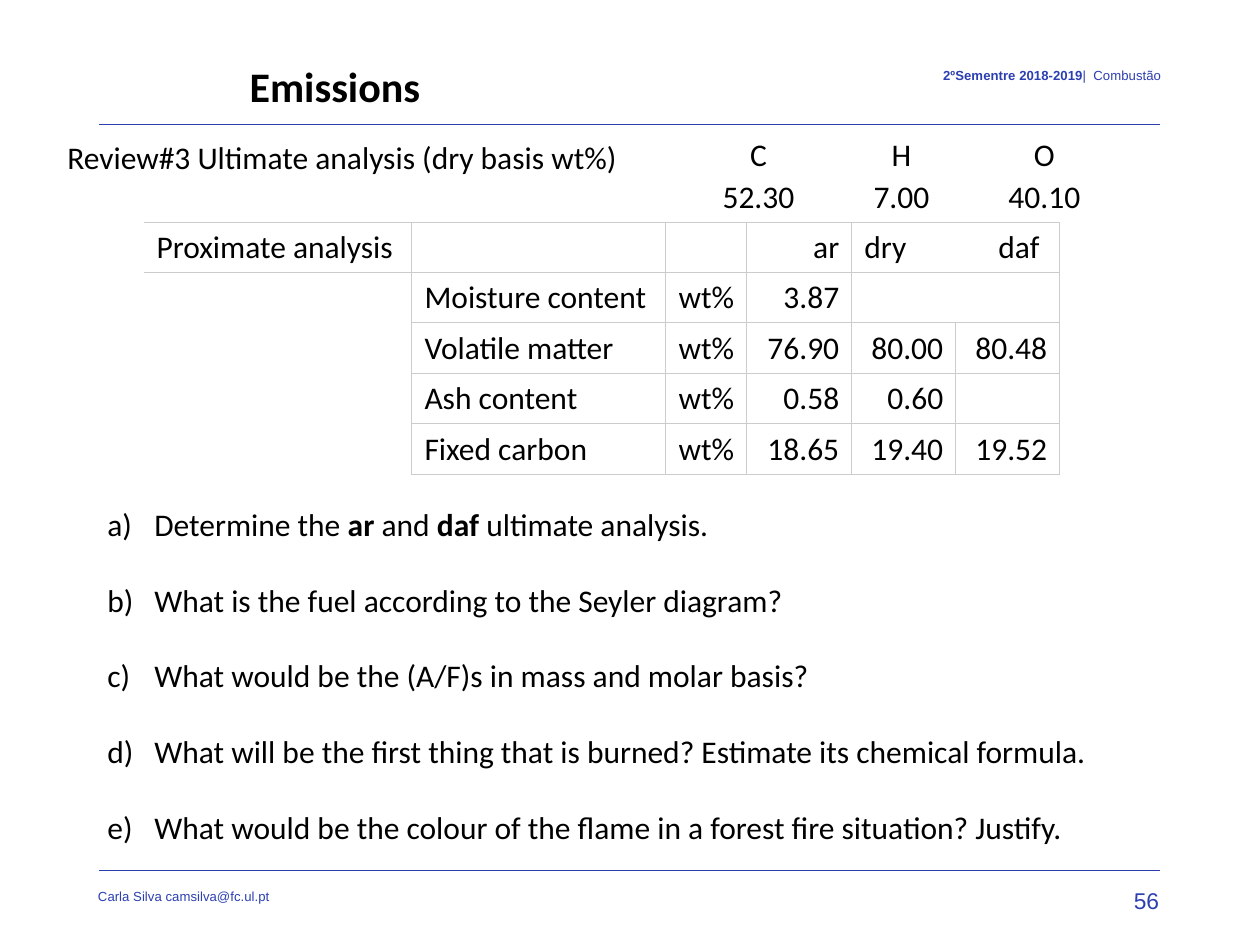
from dataclasses import dataclass

from lxml.etree import SubElement
from pptx import Presentation
from pptx.dml.color import RGBColor
from pptx.enum.shapes import MSO_CONNECTOR
from pptx.enum.text import MSO_ANCHOR, MSO_AUTO_SIZE, PP_ALIGN
from pptx.oxml.ns import qn
from pptx.util import Emu, Pt

PX = 914400 / 126
BLUE = RGBColor(0x2C, 0x3F, 0xB1)
BLACK = RGBColor(0, 0, 0)
WHITE = RGBColor(0xFF, 0xFF, 0xFF)
GRID = RGBColor(0xCC, 0xCC, 0xCC)
NO_STYLE = "{2D5ABB26-0587-4C30-8999-92F81FD0307C}"
LEFT, CENTER, RIGHT = PP_ALIGN.LEFT, PP_ALIGN.CENTER, PP_ALIGN.RIGHT


@dataclass(frozen=True)
class Span:
    text: str
    bold: bool = False


@dataclass(frozen=True)
class Box:
    left: int
    top: int
    width: int
    height: int


@dataclass(frozen=True)
class Furniture:
    box: Box
    spans: list[Span]
    align: PP_ALIGN = LEFT
    raised: bool = True


FURNITURE = [
    Furniture(Box(281, 58, 880, 32),
              [Span("2ºSementre 2018-2019", True), Span("|  Combustão")], RIGHT),
    Furniture(Box(98, 879, 880, 34), [Span("Carla Silva camsilva@fc.ul.pt")]),
    Furniture(Box(864, 881, 295, 50), [Span("56")], RIGHT, False),
]
RULES = [124, 870]
ULTIMATE = [["C", "H", "O"], ["52.30", "7.00", "40.10"]]
PROXIMATE = [
    ["Proximate analysis", "", "", "", "ar", "dry\tdaf", ""],
    ["", "", "Moisture content", "wt%", "3.87", "", ""],
    ["", "", "Volatile matter", "wt%", "76.90", "80.00", "80.48"],
    ["", "", "Ash content", "wt%", "0.58", "0.60", ""],
    ["", "", "Fixed carbon", "wt%", "18.65", "19.40", "19.52"],
]
PROXIMATE_WIDTHS = [80, 188, 254, 81, 105, 104, 104]
MERGED = [(0, 0), (0, 5), (1, 5)]
QUESTIONS = [
    [Span("Determine the "), Span("ar", True), Span(" and "), Span("daf", True),
     Span(" ultimate analysis.")],
    [Span("What is the fuel according to the Seyler diagram?")],
    [Span("What would be the (A/F)s in mass and molar basis?")],
    [Span("What will be the first thing that is burned? Estimate its chemical formula.")],
    [Span("What would be the colour of the flame in a forest fire situation? Justify.")],
]


def px(length: int) -> Emu:
    return Emu(round(length * PX))


def place(box: Box) -> list[Emu]:
    return [px(side) for side in (box.left, box.top, box.width, box.height)]


def style(paragraph, size=18, color=BLACK, name="Calibri", align=LEFT, bold=None) -> None:
    paragraph.alignment = align
    font = paragraph.font
    font.size, font.name, font.bold = Pt(size), name, bold
    font.color.rgb = color


def add_spans(paragraph, spans: list[Span]) -> None:
    for span in spans:
        run = paragraph.add_run()
        run.text = span.text
        if len(spans) > 1:
            run.font.bold = span.bold


def add_frame(slide, box: Box):
    frame = slide.shapes.add_textbox(*place(box)).text_frame
    frame.word_wrap = True
    return frame


def add_furniture(slide, item: Furniture) -> None:
    frame = add_frame(slide, item.box)
    frame.margin_left = frame.margin_right = 0
    paragraph = frame.paragraphs[0]
    style(paragraph, 13, BLUE, "Arial", item.align)
    add_spans(paragraph, item.spans)
    if item.raised:
        for run in paragraph.runs:
            run._r.get_or_add_rPr().set("baseline", "30000")


def add_rule(slide, top: int) -> None:
    rule = slide.shapes.add_connector(
        MSO_CONNECTOR.STRAIGHT, px(99), px(top), px(1160), px(top))
    rule.line.color.rgb = BLUE
    rule.line.width = Pt(0.5)
    SubElement(rule._element.spPr, qn("a:effectLst"))


def add_table(slide, left: int, top: int, widths: list[int], row_height: int, rows: int):
    box = Box(left, top, sum(widths), row_height * rows)
    table = slide.shapes.add_table(rows, len(widths), *place(box)).table
    table.first_row = table.horz_banding = False
    table._tbl.tblPr.find(qn("a:tableStyleId")).text = NO_STYLE
    for column, width in zip(table.columns, widths):
        column.width = px(width)
    for row in table.rows:
        row.height = px(row_height)
    return table


def fill_cell(cell, text: str, align: PP_ALIGN) -> None:
    cell.vertical_anchor = MSO_ANCHOR.MIDDLE
    paragraph = cell.text_frame.paragraphs[0]
    if "\t" in text:
        stops = SubElement(paragraph._p.get_or_add_pPr(), qn("a:tabLst"))
        SubElement(stops, qn("a:tab"), pos=str(px(134)), algn="l")
    style(paragraph, align=align)
    if text:
        paragraph.add_run().text = text


def set_borders(cell, sides: str) -> None:
    properties = cell._tc.get_or_add_tcPr()
    for side in "LRTB":
        line = SubElement(properties, qn(f"a:ln{side}"), w=str(Pt(0.6)))
        if side in sides:
            fill = SubElement(line, qn("a:solidFill"))
            SubElement(fill, qn("a:srgbClr"), val=str(GRID))
        else:
            SubElement(line, qn("a:noFill"))


def proximate_borders(row: int, column: int) -> str:
    if column > 1:
        return "LRTB"
    if row == 0:
        return "TB" + "R" * column
    return "T" * (row == 1) + "R" * column


def add_ultimate(slide) -> None:
    table = add_table(slide, 687, 135, [143] * 3, 42, len(ULTIMATE))
    for r, texts in enumerate(ULTIMATE):
        for c, text in enumerate(texts):
            cell = table.cell(r, c)
            cell.margin_left = cell.margin_right = px(2)
            cell.margin_top = cell.margin_bottom = px(2)
            fill_cell(cell, text, CENTER)


def add_proximate(slide) -> None:
    table = add_table(slide, 144, 222, PROXIMATE_WIDTHS, 50, len(PROXIMATE))
    for r, texts in enumerate(PROXIMATE):
        for c, text in enumerate(texts):
            cell = table.cell(r, c)
            set_borders(cell, proximate_borders(r, c))
            cell.fill.solid()
            cell.fill.fore_color.rgb = WHITE
            fill_cell(cell, text, RIGHT if c > 3 and "\t" not in text else LEFT)
    for r, c in MERGED:
        table.cell(r, c).merge(table.cell(r, c + 1))


def add_questions(slide) -> None:
    frame = add_frame(slide, Box(95, 499, 1017, 357))
    for number, spans in enumerate(QUESTIONS):
        paragraph = frame.add_paragraph() if number else frame.paragraphs[0]
        properties = paragraph._p.get_or_add_pPr()
        properties.set("marL", str(px(47)))
        properties.set("indent", str(px(-47)))
        SubElement(properties, qn("a:buAutoNum"), type="alphaLcParenR")
        if number:
            paragraph.space_before = Pt(21.6)
        style(paragraph)
        add_spans(paragraph, spans)


def add_title(slide) -> None:
    title = slide.shapes.title
    title.left, title.top, title.width, title.height = place(Box(237, 54, 523, 63))
    frame = title.text_frame
    frame.auto_size = MSO_AUTO_SIZE.NONE
    frame.vertical_anchor = MSO_ANCHOR.TOP
    frame.text = "Emissions"
    style(frame.paragraphs[0], 24, bold=True)


def main() -> None:
    deck = Presentation()
    deck.slide_width, deck.slide_height = px(1260), px(945)
    slide = deck.slides.add_slide(deck.slide_layouts[5])
    for top in RULES:
        add_rule(slide, top)
    for item in FURNITURE:
        add_furniture(slide, item)
    add_title(slide)
    review = add_frame(slide, Box(55, 132, 620, 51)).paragraphs[0]
    style(review)
    add_spans(review, [Span("Review#3 Ultimate analysis (dry basis wt%)")])
    add_ultimate(slide)
    add_questions(slide)
    add_proximate(slide)
    deck.save("out.pptx")


if __name__ == "__main__":
    main()
